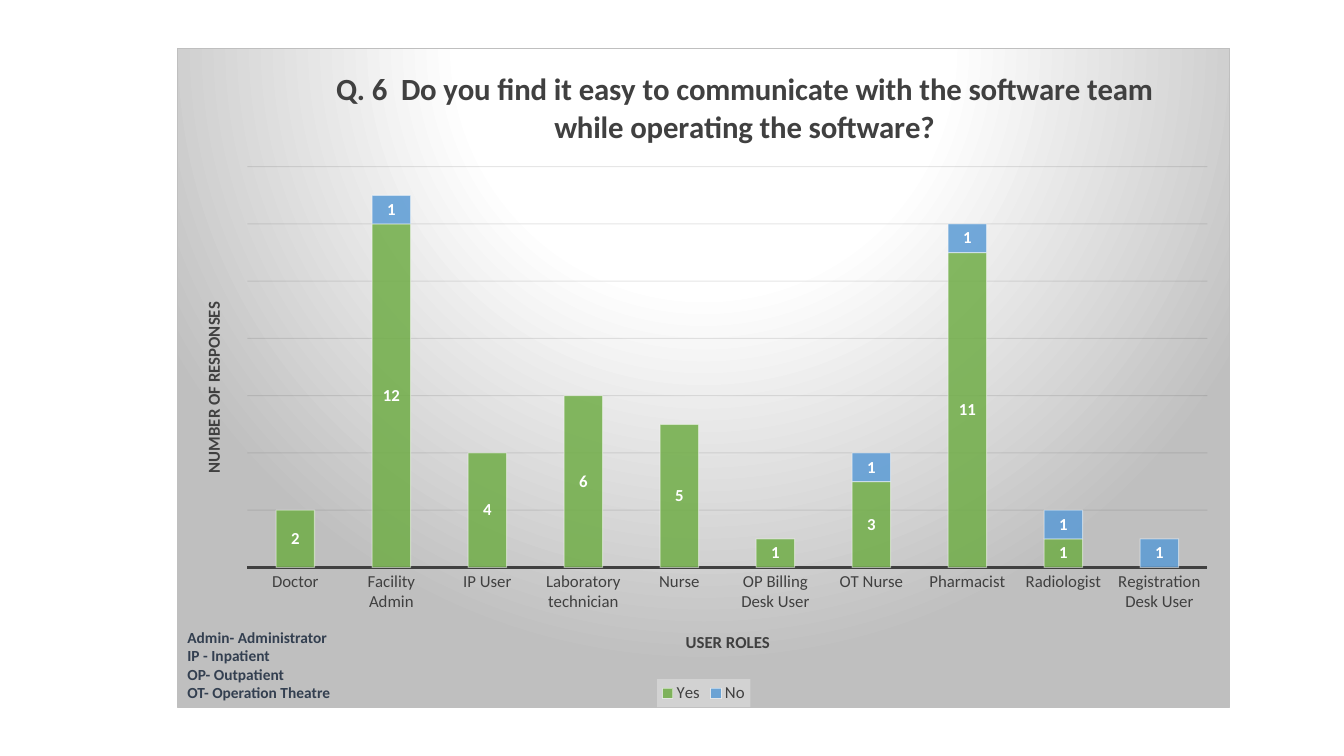
from lxml import etree
from pptx import Presentation
from pptx.chart.data import CategoryChartData
from pptx.dml.color import RGBColor
from pptx.enum.chart import XL_CHART_TYPE as ChartType
from pptx.enum.chart import XL_LABEL_POSITION as LabelPos
from pptx.enum.chart import XL_LEGEND_POSITION as LegendPos
from pptx.enum.chart import XL_TICK_LABEL_POSITION as TickLabelPos
from pptx.enum.chart import XL_TICK_MARK as TickMark
from pptx.oxml import parse_xml
from pptx.oxml.ns import nsdecls, qn
from pptx.util import Inches, Pt

WHITE = RGBColor(0xFF, 0xFF, 0xFF)
DARK = RGBColor(0x40, 0x40, 0x40)
GRID = RGBColor(0x0D, 0x0D, 0x0D)
NAVY = RGBColor(0x33, 0x3F, 0x50)
GREEN = RGBColor(0x70, 0xAD, 0x47)
BLUE = RGBColor(0x5B, 0x9B, 0xD5)
FONT = "Calibri"

ROLES = ["Doctor", "Facility Admin", "IP User", "Laboratory technician", "Nurse",
         "OP Billing Desk User", "OT Nurse", "Pharmacist", "Radiologist",
         "Registration Desk User"]
ANSWERS = [
    ("Yes", GREEN, [2, 12, 4, 6, 5, 1, 3, 11, 1, None]),
    ("No", BLUE, [None, 1, None, None, None, None, 1, 1, 1, 1]),
]
QUESTION = ("Q. 6  Do you find it easy to communicate with the software team "
            "while operating the software?")
ABBREVIATIONS = ["Admin- Administrator", "IP - Inpatient", "OP- Outpatient",
                 "OT- Operation Theatre"]

CHART_FILL = f"""<c:spPr {nsdecls('c', 'a')}>
  <a:gradFill><a:gsLst>
    <a:gs pos="0"><a:srgbClr val="FFFFFF"/></a:gs>
    <a:gs pos="39000"><a:srgbClr val="FFFFFF"/></a:gs>
    <a:gs pos="100000"><a:srgbClr val="BFBFBF"/></a:gs>
  </a:gsLst><a:path path="circle">
    <a:fillToRect l="50000" t="-80000" r="50000" b="180000"/>
  </a:path></a:gradFill>
  <a:ln w="9525"><a:solidFill><a:srgbClr val="BFBFBF"/></a:solidFill></a:ln>
</c:spPr>"""
LEGEND_FILL = f"""<c:spPr {nsdecls('c', 'a')}><a:solidFill>
  <a:srgbClr val="F2F2F2"><a:alpha val="39000"/></a:srgbClr>
</a:solidFill></c:spPr>"""


def set_font(font, size, color, bold=False):
    font.name, font.size, font.bold = FONT, Pt(size), bold
    font.color.rgb = color


def set_alpha(parent, query, percent):
    for color in parent.xpath(query):
        etree.SubElement(color, qn("a:alpha")).set("val", str(percent * 1000))


def place(element, x, y, w=None, h=None, inner=False):
    for old in element.findall(qn("c:layout")):
        element.remove(old)
    layout = parse_xml(f"<c:layout {nsdecls('c')}><c:manualLayout/></c:layout>")
    settings = [("layoutTarget", "inner" if inner else None),
                ("xMode", "edge"), ("yMode", "edge"),
                ("x", x), ("y", y), ("w", w), ("h", h)]
    for name, value in settings:
        if value is not None:
            etree.SubElement(layout[0], qn(f"c:{name}")).set("val", str(value))
    overlay = element.find(qn("c:overlay"))
    if overlay is None:
        element.insert(0, layout)
    else:
        overlay.addprevious(layout)


def add_title(owner, text, size, x, y):
    owner.has_title = True
    title = getattr(owner, "chart_title", None) or owner.axis_title
    p = title.text_frame.paragraphs[0]
    p.text = text
    set_font(p.font, size, DARK, True)
    place(title._element, x, y)


def style_series(series, color):
    fmt = series.format
    fmt.fill.solid()
    fmt.fill.fore_color.rgb = color
    fmt.line.color.rgb = WHITE
    fmt.line.width = Pt(0.75)
    set_alpha(series._element, "c:spPr/a:solidFill/a:srgbClr", 85)
    set_alpha(series._element, "c:spPr/a:ln/a:solidFill/a:srgbClr", 50)
    labels = series.data_labels
    labels.show_value = True
    labels.position = LabelPos.CENTER
    set_font(labels.font, 12, WHITE, True)


def style_axes(chart):
    roles, counts = chart.category_axis, chart.value_axis
    roles.major_tick_mark = TickMark.NONE
    set_font(roles.tick_labels.font, 12, DARK)
    roles.format.line.color.rgb = DARK
    roles.format.line.width = Pt(1.5)
    add_title(roles, "USER ROLES", 12, 0.48, 0.88)

    counts.minimum_scale, counts.maximum_scale, counts.major_unit = 0, 14, 2
    counts.tick_label_position = TickLabelPos.NONE
    counts.visible = False
    grid = counts.major_gridlines.format.line
    grid.color.rgb = GRID
    grid.width = Pt(0.75)
    set_alpha(counts._element, "c:majorGridlines//a:srgbClr", 10)
    add_title(counts, "NUMBER OF RESPONSES", 12, 0.02, 0.38)
    counts.axis_title.text_frame._txBody.bodyPr.set("rot", "-5400000")
    counts.axis_title.text_frame._txBody.bodyPr.set("vert", "horz")


def style_legend(chart):
    chart.has_legend = True
    legend = chart.legend
    legend.position = LegendPos.BOTTOM
    legend.include_in_layout = False
    set_font(legend.font, 12, DARK)
    legend._element.find(qn("c:overlay")).addnext(parse_xml(LEGEND_FILL))


def add_response_chart(slide):
    data = CategoryChartData()
    data.categories = ROLES
    for name, _, values in ANSWERS:
        data.add_series(name, values)
    chart = slide.shapes.add_chart(
        ChartType.COLUMN_STACKED, Inches(1.76), Inches(0.48),
        Inches(10.44), Inches(6.54), data).chart
    chart.font.name, chart.font.size = FONT, Pt(10)
    space = chart._chartSpace
    space.find(qn("c:chart")).addnext(parse_xml(CHART_FILL))
    add_title(chart, QUESTION, 22, 0.145, 0.02)

    plot = chart.plots[0]
    plot.gap_width, plot.overlap = 150, 100
    plot.vary_by_categories = False
    for series, (_, color, _) in zip(plot.series, ANSWERS):
        style_series(series, color)
    style_axes(chart)
    style_legend(chart)
    place(space.xpath("c:chart/c:plotArea")[0], 0.066, 0.179, 0.913, 0.609, True)


def add_abbreviations(slide):
    box = slide.shapes.add_textbox(Inches(1.76), Inches(6.18), Inches(2.08), Inches(0.84))
    tf = box.text_frame
    tf.word_wrap = True
    tf.text = "\n".join(ABBREVIATIONS)
    for p in tf.paragraphs:
        set_font(p.font, 11, NAVY, True)


def main():
    prs = Presentation()
    prs.slide_width, prs.slide_height = Inches(13.33), Inches(7.5)
    slide = prs.slides.add_slide(prs.slide_layouts[6])
    add_response_chart(slide)
    add_abbreviations(slide)
    prs.save("out.pptx")


if __name__ == "__main__":
    main()
